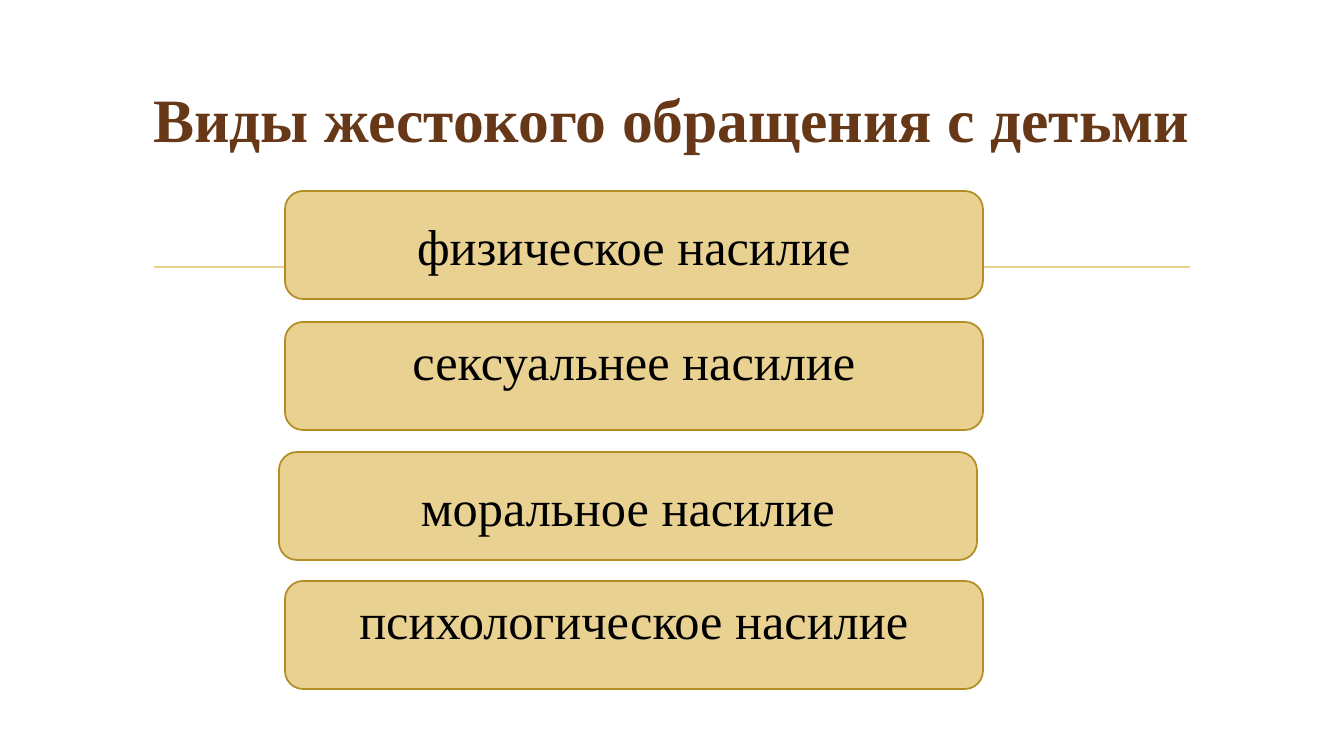
from lxml import etree
from pptx import Presentation
from pptx.dml.color import RGBColor
from pptx.enum.shapes import MSO_CONNECTOR, MSO_SHAPE
from pptx.enum.text import MSO_ANCHOR, MSO_AUTO_SIZE, PP_ALIGN
from pptx.oxml.ns import qn
from pptx.util import Emu, Pt

STRAIGHT = MSO_CONNECTOR.STRAIGHT
ROUNDED = MSO_SHAPE.ROUNDED_RECTANGLE
MIDDLE = MSO_ANCHOR.MIDDLE
CENTER = PP_ALIGN.CENTER
NO_AUTOFIT = MSO_AUTO_SIZE.NONE

FONT = "Times New Roman"
COLORS = {"title": "663817", "gold": "E8D191", "border": "B38D25", "text": "000000"}
BOX_WIDTH, BOX_HEIGHT = 698, 108


def px(count):
    return Emu(round(count * 914400 / 100.8))


def write_centered(shape, text, size, color, bold=False):
    frame = shape.text_frame
    frame.word_wrap = True
    frame.auto_size = NO_AUTOFIT
    frame.vertical_anchor = MIDDLE
    para = frame.paragraphs[0]
    para.text = text
    para.alignment = CENTER
    para.font.name = FONT
    para.font.size = Pt(size)
    para.font.bold = bold
    para.font.color.rgb = RGBColor.from_string(COLORS[color])


deck = Presentation()
deck.slide_width, deck.slide_height = px(1344), px(756)
page = deck.slides.add_slide(deck.slide_layouts[5])

title = page.shapes.title
title.left, title.top, title.width, title.height = px(100), px(45), px(1159), px(146)
write_centered(title, "Виды жестокого обращения с детьми ", 44, "title", bold=True)

divider = page.shapes.add_connector(STRAIGHT, px(154), px(267), px(1190), px(267))
divider.line.color.rgb = RGBColor.from_string(COLORS["gold"])
divider.line.width = Pt(1.25)
etree.SubElement(divider._element.spPr, qn("a:effectLst"))

# Label, left, top, and whether the label sits above the middle
violence_types = [
    ("физическое насилие", 285, 191, False),
    ("сексуальнее насилие", 285, 322, True),
    ("моральное насилие", 279, 452, False),
    ("психологическое насилие", 285, 581, True),
]
for label, left, top, raised in violence_types:
    box = page.shapes.add_shape(ROUNDED, px(left), px(top), px(BOX_WIDTH), px(BOX_HEIGHT))
    box.shadow.inherit = False
    box.fill.solid()
    box.fill.fore_color.rgb = RGBColor.from_string(COLORS["gold"])
    box.line.color.rgb = RGBColor.from_string(COLORS["border"])
    box.line.width = Pt(1.25)
    write_centered(box, label, 36, "text")
    if raised:
        box.text_frame.margin_top = px(0)
        box.text_frame.margin_bottom = px(31)

deck.save("out.pptx")
